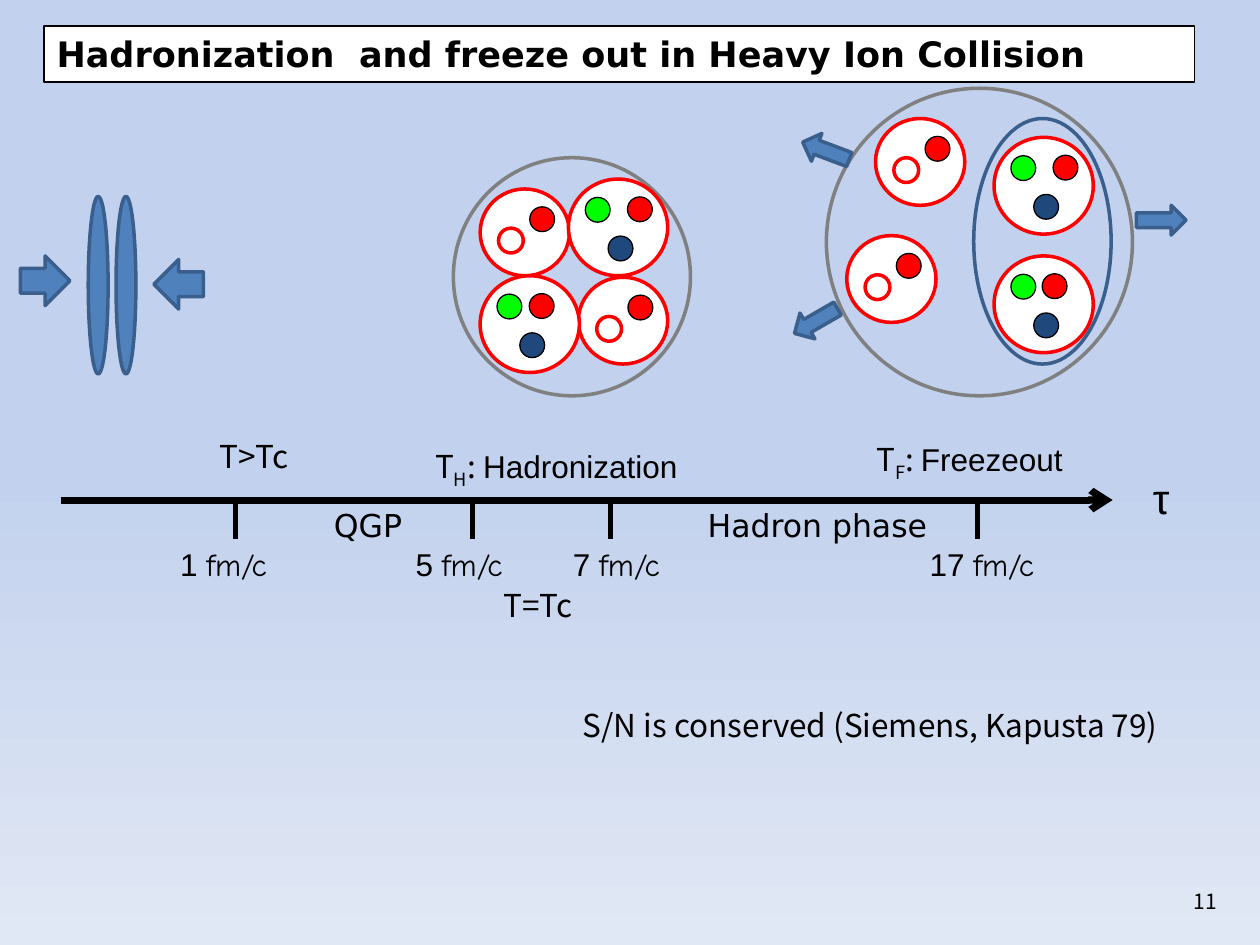
"""Build the slide on hadronization and freeze out in heavy ion collisions."""
from lxml.etree import SubElement
from pptx import Presentation
from pptx.dml.color import RGBColor
from pptx.enum.shapes import MSO_CONNECTOR, MSO_SHAPE
from pptx.enum.text import MSO_ANCHOR, MSO_AUTO_SIZE, PP_ALIGN
from pptx.oxml.ns import qn
from pptx.util import Cm, Pt

BLACK, WHITE = RGBColor(0, 0, 0), RGBColor(255, 255, 255)
RED, GREEN = RGBColor(255, 0, 0), RGBColor(0, 255, 0)
NAVY, GRAY = RGBColor(0x1F, 0x49, 0x7D), RGBColor(0x80, 0x80, 0x80)
BLUE, BLUE_EDGE = RGBColor(0x4F, 0x81, 0xBD), RGBColor(0x3A, 0x5F, 0x8C)
SKY, PALE = RGBColor(0xC2, 0xD1, 0xED), RGBColor(0xE1, 0xE8, 0xF5)

SANS, ARIAL, COMIC, DEJAVU = "Noto Sans CJK KR", "Arial", "Comic Neue", "DejaVu Sans"
LEFT, CENTER, RIGHT = PP_ALIGN.LEFT, PP_ALIGN.CENTER, PP_ALIGN.RIGHT
OVAL, ARROW, RECT = MSO_SHAPE.OVAL, MSO_SHAPE.RIGHT_ARROW, MSO_SHAPE.RECTANGLE

TITLE = "Hadronization  and freeze out in Heavy Ion Collision"
TITLE_AREA = (0.89, 0.53, 23.19, 1.12)
PAGE_NUMBER_AREA = (18.87, 17.65, 5.92, 1.02)

AXIS_Y, AXIS_START, AXIS_END, TICK_END = 10.08, 1.22, 22.43, 10.87
TIMES = [
    ("1 ", 4.75, 3.38, 2.8),
    ("5 ", 9.52, 8.13, 2.8),
    ("7 ", 12.3, 11.3, 2.8),
    ("17 ", 19.7, 18.49, 3.78),
]
LABELS = [
    ("T>Tc", SANS, 18, LEFT, (4.17, 8.69, 2, 1.02)),
    ("T=Tc", SANS, 18, LEFT, (9.9, 11.68, 2, 1.02)),
    ("τ", ARIAL, 24, LEFT, (22.99, 9.4, 1.6, 1.27)),
    ("QGP", DEJAVU, 18, CENTER, (5.72, 10.08, 3.4, 1.02)),
    ("Hadron phase", DEJAVU, 18, CENTER, (13.89, 10.08, 5.18, 1.02)),
    ("S/N is conserved (Siemens, Kapusta 79)", SANS, 18, LEFT, (11.5, 14.1, 13.49, 1.02)),
]
STAGES = [
    ("H", "Hadronization", (8.33, 8.89, 5.77, 1.02)),
    ("F", "Freezeout", (16.66, 8.74, 5.77, 1.02)),
]

NUCLEI = [(1.78, 3.96, 0.4, 3.58), (2.34, 3.96, 0.4, 3.58)]
FIREBALLS = [(9.14, 3.18, 4.78, 4.8), (16.66, 1.78, 6.17, 6.2)]
BARYON_PAIR = (19.63, 2.39, 2.77, 4.95)
ARROWS = [
    ((0.41, 5.16, 1, 1), 0),
    ((3.1, 5.23, 1, 1), 180),
    ((22.91, 4.14, 1, 0.6), 0),
    ((15.95, 6.17, 1, 0.6), 150),
    ((16.15, 2.74, 1, 0.6), 200.5),
]
QUARK = 0.5
MESONS = [(11.66, 5.59), (9.68, 3.81), (17.07, 4.75), (17.65, 2.39)]
BARYONS = [(11.46, 3.61, 1.19), (9.68, 5.56, 0.99), (20.04, 2.77, 1.19), (20.04, 5.16, 0.97)]


def lengths(area):
    return [Cm(value) for value in area]


def add_figure(page, kind, area, fill, edge, width=2, rotation=0):
    figure = page.shapes.add_shape(kind, *lengths(area))
    figure.shadow.inherit = False
    figure.rotation = rotation
    if fill is None:
        figure.fill.background()
    else:
        figure.fill.solid()
        figure.fill.fore_color.rgb = fill
    figure.line.color.rgb = edge
    figure.line.width = Pt(width)
    return figure


def add_quark(page, left, top, color):
    add_figure(page, OVAL, (left, top, QUARK, QUARK), color, BLACK, 0.75)


def add_meson(page, left, top):
    add_figure(page, OVAL, (left, top, 1.8, 1.75), WHITE, RED)
    add_quark(page, left + 1, top + 0.36, RED)
    add_figure(page, OVAL, (left + 0.37, top + 0.79, QUARK, QUARK), None, RED)


def add_baryon(page, left, top, red_shift):
    add_figure(page, OVAL, (left, top, 2, 1.95), WHITE, RED)
    add_quark(page, left + 0.34, top + 0.37, GREEN)
    add_quark(page, left + red_shift, top + 0.36, RED)
    add_quark(page, left + 0.8, top + 1.15, NAVY)


def write(box, spans, size=18, align=LEFT, bold=False):
    frame = box.text_frame
    frame.word_wrap = True
    frame.vertical_anchor = MSO_ANCHOR.TOP
    frame.auto_size = MSO_AUTO_SIZE.SHAPE_TO_FIT_TEXT
    para = frame.paragraphs[0]
    para.alignment = align
    for text, font, *baseline in spans:
        span = para.add_run()
        span.text = text
        span.font.name = font
        span.font.size = Pt(size)
        span.font.bold = bold
        span.font.color.rgb = BLACK
        if baseline:
            span.font._element.set("baseline", str(baseline[0] * 1000))


def add_text(page, area, spans, size=18, align=LEFT):
    box = page.shapes.add_textbox(*lengths(area))
    write(box, spans, size, align)
    return box


def add_line(page, start, end, width, arrow=False):
    line = page.shapes.add_connector(MSO_CONNECTOR.STRAIGHT, *lengths(start + end))
    line.line.color.rgb = BLACK
    line.line.width = Pt(width)
    if arrow:
        SubElement(line.line._get_or_add_ln(), qn("a:tailEnd"), type="arrow")
    SubElement(line._element.spPr, qn("a:effectLst"))


def paint_background(page):
    fill = page.background.fill
    fill.gradient()
    fill.gradient_angle = 270
    for stop, color, position in zip(fill.gradient_stops, (SKY, PALE), (0.5, 1)):
        stop.color.rgb = color
        stop.position = position


def add_timeline(page):
    add_line(page, (AXIS_START, AXIS_Y), (AXIS_END, AXIS_Y), 4, arrow=True)
    for number, tick, left, width in TIMES:
        add_line(page, (tick, AXIS_Y), (tick, TICK_END), 3)
        add_text(page, (left, TICK_END, width, 1.02), [(number, ARIAL), ("fm/c", COMIC)])
    for text, font, size, align, area in LABELS:
        add_text(page, area, [(text, font)], size, align)
    for index, name, area in STAGES:
        spans = [("T", SANS), (index, SANS, -25), (": ", SANS), (name, ARIAL)]
        add_text(page, area, spans, align=CENTER)


def add_collision(page):
    for area in NUCLEI:
        add_figure(page, OVAL, area, BLUE, BLUE_EDGE)
    for area in FIREBALLS:
        add_figure(page, OVAL, area, None, GRAY)
    for area, rotation in ARROWS:
        add_figure(page, ARROW, area, BLUE, BLUE_EDGE, rotation=rotation)
    for place in MESONS:
        add_meson(page, *place)
    for place in BARYONS:
        add_baryon(page, *place)
    add_figure(page, OVAL, BARYON_PAIR, None, BLUE_EDGE)


def main():
    deck = Presentation()
    deck.slide_width, deck.slide_height = Cm(25.4), Cm(19.05)
    page = deck.slides.add_slide(deck.slide_layouts[6])
    paint_background(page)
    banner = add_figure(page, RECT, TITLE_AREA, WHITE, BLACK, 1)
    write(banner, [(TITLE, DEJAVU)], 20, bold=True)
    number = add_text(page, PAGE_NUMBER_AREA, [("11", SANS)], 12, RIGHT)
    number.text_frame.auto_size = MSO_AUTO_SIZE.NONE
    number.text_frame.vertical_anchor = MSO_ANCHOR.MIDDLE
    add_timeline(page)
    add_collision(page)
    deck.save("out.pptx")


if __name__ == "__main__":
    main()
